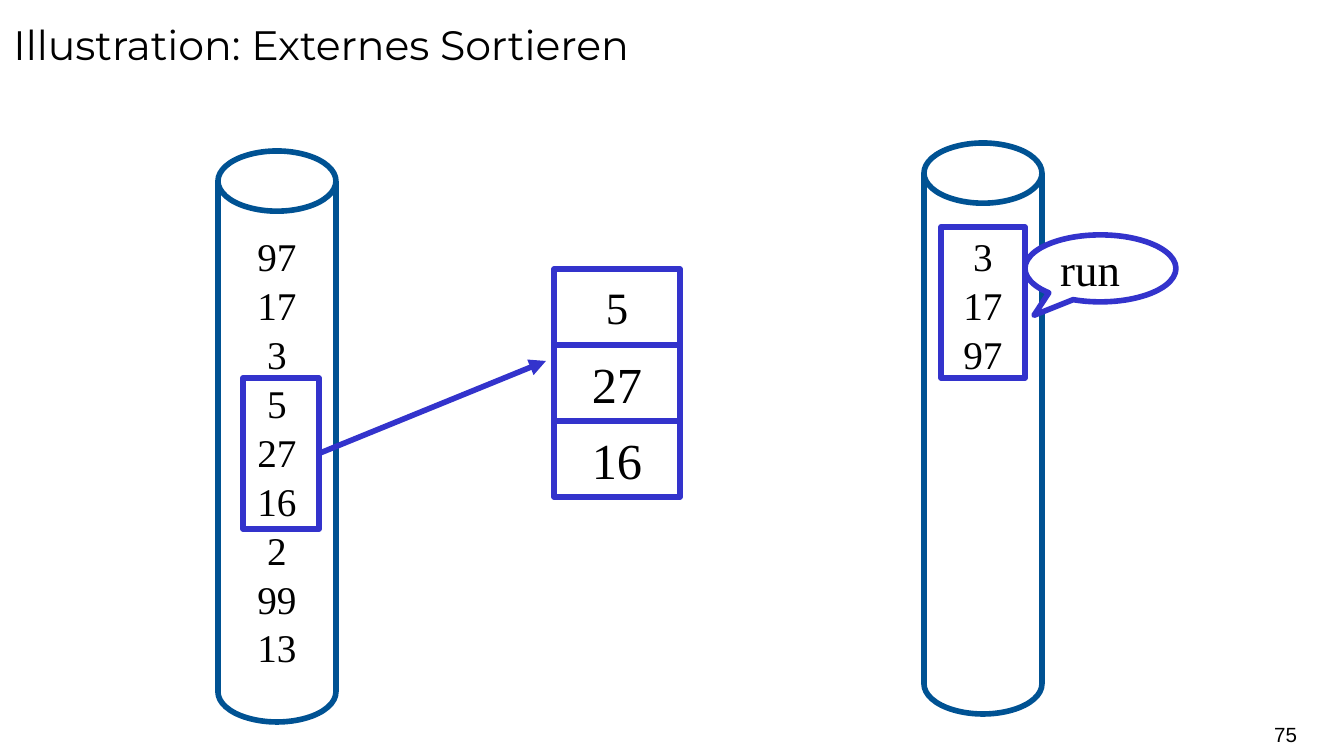
from lxml import etree
from pptx import Presentation
from pptx.dml.color import RGBColor
from pptx.enum import shapes, text
from pptx.oxml.ns import qn
from pptx.util import Pt

PX = 914400 / 134.4
BLACK, WHITE, DISK_BLUE, MARK_BLUE = "000000", "FFFFFF", "005293", "3333CC"
SERIF = "Times New Roman"
CENTER, MIDDLE = text.PP_ALIGN.CENTER, text.MSO_ANCHOR.MIDDLE
SHAPE = shapes.MSO_SHAPE

TITLE = "Illustration: Externes Sortieren"
PAGE_NUMBER = "75"
INPUT_DISK = ["97", "17", "3", "5", "27", "16", "2", "99", "13"]
OUTPUT_DISK = ["3", "17", "97"]
MEMORY = [("5", 24), ("27", 27), ("16", 27)]
DISK_SIZE = (118, 571)
CELL_WIDTH, CELL_HEIGHT = 126, 76


def px(*lengths):
    return [round(length * PX) for length in lengths]


def color(value):
    return RGBColor.from_string(value)


def write(box, lines, size, font=SERIF, align=CENTER, anchor=MIDDLE, wrap=False, gap=0):
    frame = box.text_frame
    frame.word_wrap = wrap
    frame.vertical_anchor = anchor
    for i, line in enumerate(lines):
        para = frame.add_paragraph() if i else frame.paragraphs[0]
        para.alignment = align
        if i:
            para.space_before = Pt(gap)
        span = para.add_run()
        span.text = line
        span.font.name = font
        span.font.size = Pt(size)
        span.font.color.rgb = color(BLACK)
    return frame


def outline(item, line_color):
    item.line.color.rgb = color(line_color)
    item.line.width = Pt(3)


def add_box(page, kind, area, line_color=MARK_BLUE, filled=True):
    box = page.shapes.add_shape(kind, *px(*area))
    box.shadow.inherit = False
    if filled:
        box.fill.solid()
        box.fill.fore_color.rgb = color(WHITE)
    else:
        box.fill.background()
    outline(box, line_color)
    return box


def add_disk(page, left, top, numbers, anchor=MIDDLE, inset=7):
    disk = add_box(page, SHAPE.CAN, (left, top, *DISK_SIZE), DISK_BLUE)
    disk.adjustments[0] = 0.51
    frame = write(disk, numbers, 21, anchor=anchor, gap=1)
    frame.margin_top = px(inset)[0]


def add_arrow(page, source, end):
    arrow = page.shapes.add_connector(shapes.MSO_CONNECTOR.STRAIGHT, 0, 0, *px(*end))
    arrow.begin_connect(source, 3)
    outline(arrow, MARK_BLUE)
    etree.SubElement(arrow.line._get_or_add_ln(), qn("a:tailEnd"), type="triangle")
    etree.SubElement(arrow._element.spPr, qn("a:effectLst"))


def main():
    deck = Presentation()
    deck.slide_width, deck.slide_height = px(1344, 756)
    page = deck.slides.add_slide(deck.slide_layouts[5])

    title = page.shapes.title
    title.left, title.top, title.width, title.height = px(0, 0, 1344, 126)
    write(title, [TITLE], 22, "Montserrat", text.PP_ALIGN.LEFT, text.MSO_ANCHOR.TOP, True)
    title.text_frame.paragraphs[0].line_spacing = 1.25

    add_disk(page, 218, 151, INPUT_DISK)
    add_disk(page, 924, 143, OUTPUT_DISK, text.MSO_ANCHOR.TOP, 29)

    for row, (number, size) in enumerate(MEMORY):
        area = (554, 269 + row * CELL_HEIGHT, CELL_WIDTH, CELL_HEIGHT)
        write(add_box(page, SHAPE.RECTANGLE, area), [number], size)

    add_box(page, SHAPE.RECTANGLE, (941, 227, 84, 151), filled=False)
    callout = add_box(page, SHAPE.OVAL_CALLOUT, (1025, 235, 151, 67))
    callout.adjustments[0], callout.adjustments[1] = -0.44, 0.7
    write(callout, ["run"], 24, align=text.PP_ALIGN.LEFT, wrap=True)

    loaded = add_box(page, SHAPE.RECTANGLE, (243, 378, 76, 151), filled=False)
    add_arrow(page, loaded, (546, 361))

    number = page.shapes.add_textbox(*px(996, 714, 301, 40))
    frame = write(number, [PAGE_NUMBER], 11, "Arial", text.PP_ALIGN.RIGHT, wrap=True)
    frame.margin_left = frame.margin_right = 0

    deck.save("out.pptx")


if __name__ == "__main__":
    main()
